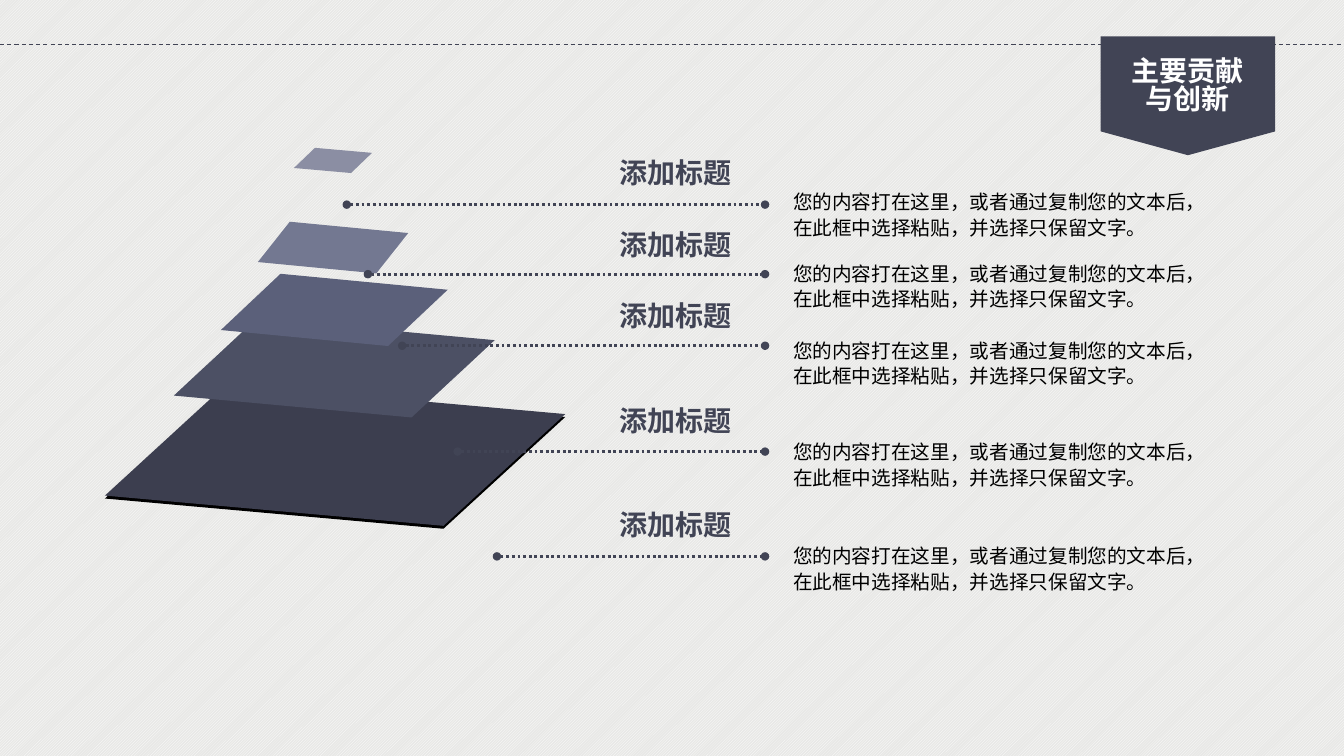
import lxml.etree
import pptx
import pptx.dml.color
import pptx.enum.dml
import pptx.enum.shapes
import pptx.enum.text
import pptx.oxml.ns
import pptx.util
from dataclasses import dataclass

COLS, ROWS = 160, 90
BODY = "您的内容打在这里，或者通过复制您的文本后，在此框中选择粘贴，并选择只保留文字。"


@dataclass(frozen=True)
class Theme:
    font: str = "Noto Sans CJK SC"
    ink: str = "414455"
    text: str = "000000"
    light: str = "FFFFFF"
    paper: str = "E8E8E6"
    edge: str = "000000"
    sheets: tuple = ("3C3E4F", "4C5064", "5B607A", "737891", "8B8EA3")
    title_size: int = 20
    body_size: int = 14


def rgb(value):
    return pptx.dml.color.RGBColor.from_string(value)


def add_xml(parent, tag, **attrs):
    return lxml.etree.SubElement(parent, pptx.oxml.ns.qn(tag), attrs)


class SlideBuilder:
    """Places elements on a grid of COLS by ROWS cells."""

    def __init__(self, prs, theme):
        self.prs, self.theme = prs, theme
        self.s = prs.slides.add_slide(prs.slide_layouts[6])

    def x(self, cols):
        return round(self.prs.slide_width * cols / COLS)

    def y(self, rows):
        return round(self.prs.slide_height * rows / ROWS)

    def box(self, left, top, width, height):
        return self.x(left), self.y(top), self.x(width), self.y(height)

    def background(self):
        fill = self.s.background.fill
        fill.patterned()
        fill.pattern = pptx.enum.dml.MSO_PATTERN.LIGHT_UPWARD_DIAGONAL
        fill.fore_color.rgb = rgb(self.theme.light)
        fill.back_color.rgb = rgb(self.theme.paper)

    def paint(self, sp, color):
        sp.shadow.inherit = False
        sp.fill.solid()
        sp.fill.fore_color.rgb = rgb(color)
        sp.line.fill.background()

    def shape(self, kind, place, color):
        self.paint(self.s.shapes.add_shape(kind, *self.box(*place)), color)

    def sheet(self, top, right, left, color, drop=0):
        """Parallelogram from three corners; the fourth follows from them."""
        bottom = (right[0] + left[0] - top[0], right[1] + left[1] - top[1])
        points = [(self.x(c), self.y(r + drop)) for c, r in (top, right, bottom, left)]
        builder = self.s.shapes.build_freeform(*points[0])
        builder.add_line_segments(points[1:], close=True)
        self.paint(builder.convert_to_shape(), color)

    def line(self, start, end, width, dash, dots=False):
        cx = self.s.shapes.add_connector(
            pptx.enum.shapes.MSO_CONNECTOR.STRAIGHT,
            self.x(start[0]), self.y(start[1]), self.x(end[0]), self.y(end[1]))
        cx.line.color.rgb = rgb(self.theme.ink)
        for name, value in {"width": pptx.util.Pt(width), "dash_style": dash}.items():
            setattr(cx.line, name, value)
        props = cx.line.color and cx._element.spPr
        if dots:
            ln = props.find(pptx.oxml.ns.qn("a:ln"))
            for tag in ("a:headEnd", "a:tailEnd"):
                add_xml(ln, tag, type="oval")
        add_xml(props, "a:effectLst")

    def text(self, place, lines, size, color, spacing, bold=False, wrap=False):
        tf = self.s.shapes.add_textbox(*self.box(*place)).text_frame
        frame_format = {"word_wrap": wrap,
                        "auto_size": pptx.enum.text.MSO_AUTO_SIZE.SHAPE_TO_FIT_TEXT}
        align = pptx.enum.text.PP_ALIGN.LEFT if wrap else pptx.enum.text.PP_ALIGN.CENTER
        font_format = {"name": self.theme.font, "size": pptx.util.Pt(size), "bold": bold}
        for name, value in frame_format.items():
            setattr(tf, name, value)
        for i, line in enumerate(lines):
            p = tf.add_paragraph() if i else tf.paragraphs[0]
            p.alignment, p.line_spacing = align, spacing
            r = p.add_run()
            r.text = line
            r.font.color.rgb = rgb(color)
            for name, value in font_format.items():
                setattr(r.font, name, value)
            add_xml(r.font._element, "a:ea", typeface=self.theme.font)


def main():
    prs = pptx.Presentation()
    prs.slide_width, prs.slide_height = pptx.util.Inches(13.33), pptx.util.Inches(7.5)
    theme = Theme()
    page = SlideBuilder(prs, theme)
    dash = pptx.enum.dml.MSO_LINE
    page.background()

    # Header rule and badge
    page.line((0, 5.28), (COLS, 5.28), 0.75, dash.DASH)
    page.shape(pptx.enum.shapes.MSO_SHAPE.FLOWCHART_OFFPAGE_CONNECTOR,
               (131.04, 4.32, 20.76, 14.16), theme.ink)
    page.text((133.44, 6.36, 15.84, 9.24), ("主要贡献", "与创新"),
              theme.title_size, theme.light, 0.85, bold=True)

    # Stacked sheets, bottom to top: top, right and left corners
    sheets = (
        ((27, 45.7), (67.3, 49.3), (12.5, 59)),
        ((30.6, 37.9), (58.9, 40.5), (20.7, 47.1)),
        ((33.4, 32.6), (53.3, 34.5), (26.3, 39.3)),
        ((34.5, 26.4), (48.6, 27.75), (30.7, 31.2)),
        ((37.5, 17.6), (44.3, 18.2), (35, 20)),
    )
    page.sheet(*sheets[0], theme.edge, drop=0.35)
    for corners, color in zip(sheets, theme.sheets):
        page.sheet(*corners, color)

    # Leaders with headings and body text: leader start, heading top, body top
    entries = (
        ((41.28, 24.36), 18.36, 21.84),
        ((43.8, 32.64), 27, 30.36),
        ((47.88, 41.16), 35.4, 39.48),
        ((54.48, 53.76), 47.88, 51.6),
        ((59.16, 66.24), 60.24, 63.96),
    )
    for start, heading_top, body_top in entries:
        page.line(start, (91.08, start[1]), 2, dash.ROUND_DOT, dots=True)
        page.text((72.48, heading_top, 15.84, 5.28), ("添加标题",),
                  theme.title_size, theme.ink, 0.9, bold=True)
        page.text((93.24, body_top, 50.64, 8.52), (BODY,),
                  theme.body_size, theme.text, 1.08, wrap=True)

    prs.save("out.pptx")


if __name__ == "__main__":
    main()
